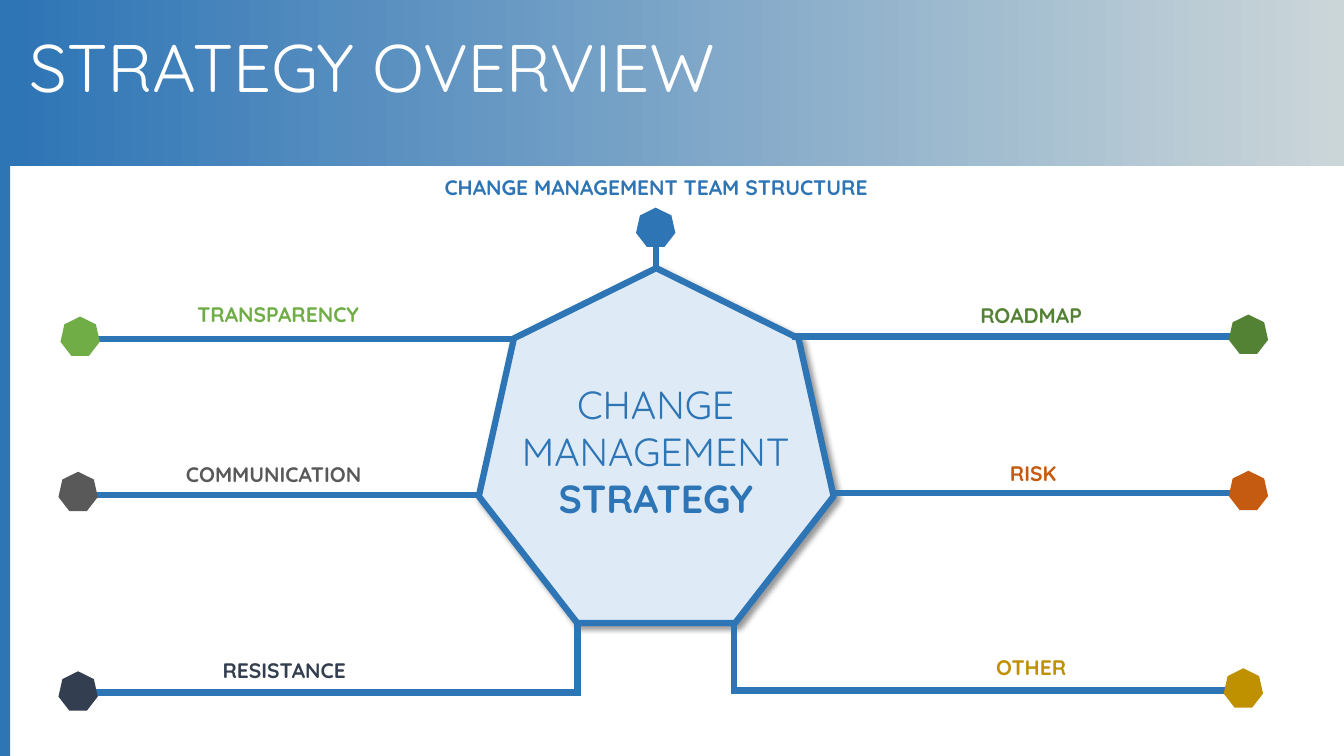
from dataclasses import dataclass

from lxml.etree import SubElement
from pptx import Presentation
from pptx.dml.color import RGBColor
from pptx.enum.shapes import MSO_CONNECTOR, MSO_SHAPE
from pptx.enum.text import MSO_AUTO_SIZE, PP_ALIGN
from pptx.oxml.ns import qn
from pptx.shapes.autoshape import Shape
from pptx.slide import Slide
from pptx.util import Pt

COLORS = {
    "blue": "2E75B6", "mist": "CBD6D9", "pale": "DEEBF7", "white": "FFFFFF",
    "green": "70AD47", "forest": "548235", "orange": "C55A11",
    "gold": "BF9000", "navy": "333F50", "gray": "595959", "black": "000000",
}
TITLE_FORMAT = {"name": "Quicksand", "size": Pt(48), "bold": False}
CORE_FORMAT = {"name": "Quicksand", "size": Pt(28), "bold": False}
STRONG_FORMAT = CORE_FORMAT | {"bold": True}
LABEL_FORMAT = {"name": "Quicksand", "size": Pt(15), "bold": True}
MARKER_SIZE = 28.08
LABEL_HEIGHT = 25.2
BORDER = 4.5

Point = tuple[float, float]
Box = tuple[float, float, float, float]
Line = tuple[str, dict]


@dataclass(frozen=True)
class Topic:
    name: str
    color: str
    label: Point
    marker: Point
    branches: tuple[tuple[Point, Point], ...]
    label_width: float = 208.8


TOPICS = [
    Topic("CHANGE MANAGEMENT TEAM STRUCTURE", "blue", (290.88, 120.96), (454.32, 148.32),
          (((468.72, 191.52), (468.72, 162.72)),), 355.68),
    Topic("TRANSPARENCY", "green", (94.32, 211.68), (43.2, 226.08),
          (((48.96, 241.92), (367.2, 241.92)),)),
    Topic("COMMUNICATION", "gray", (45.36, 326.16), (41.76, 336.96),
          (((48.96, 353.52), (342, 353.52)),), 300.24),
    Topic("RESISTANCE", "navy", (98.64, 465.84), (41.76, 479.52),
          (((48.96, 494.64), (414.72, 494.64)), ((412.56, 493.92), (412.56, 444.96)))),
    Topic("ROADMAP", "forest", (632.16, 212.4), (877.68, 224.64),
          (((565.92, 240.48), (884.16, 240.48)),)),
    Topic("RISK", "orange", (633.6, 325.44), (877.68, 336.24),
          (((595.44, 352.08), (887.76, 352.08)),)),
    Topic("OTHER", "gold", (632.16, 463.68), (874.08, 477.36),
          (((522, 493.2), (887.76, 493.2)), ((524.16, 493.2), (524.16, 444.96)))),
]


def rgb(color: str) -> RGBColor:
    return RGBColor.from_string(COLORS[color])


def add_figure(slide: Slide, kind: MSO_SHAPE, box: Box, color: str) -> Shape:
    figure = slide.shapes.add_shape(kind, *map(Pt, box))
    figure.shadow.inherit = False
    figure.fill.solid()
    figure.fill.fore_color.rgb = rgb(color)
    figure.line.fill.background()
    return figure


def add_text(slide: Slide, box: Box, lines: list[Line], color: str,
             align: PP_ALIGN = PP_ALIGN.CENTER, wrap: bool = True) -> None:
    frame = slide.shapes.add_textbox(*map(Pt, box)).text_frame
    frame.word_wrap = wrap
    frame.auto_size = MSO_AUTO_SIZE.SHAPE_TO_FIT_TEXT
    for index, (words, font_format) in enumerate(lines):
        paragraph = frame.add_paragraph() if index else frame.paragraphs[0]
        paragraph.alignment = align
        run = paragraph.add_run()
        run.text = words
        for attribute, value in font_format.items():
            setattr(run.font, attribute, value)
        run.font.color.rgb = rgb(color)


def add_branch(slide: Slide, start: Point, end: Point) -> None:
    branch = slide.shapes.add_connector(
        MSO_CONNECTOR.STRAIGHT, *map(Pt, (*start, *end)))
    branch.line.color.rgb = rgb("blue")
    branch.line.width = Pt(BORDER)
    SubElement(branch._element.spPr, qn("a:effectLst"))


def add_banner(slide: Slide) -> None:
    banner = add_figure(slide, MSO_SHAPE.RECTANGLE, (7.2, 0, 952.8, 118.8), "blue")
    banner.fill.gradient()
    banner.fill.gradient_angle = 0
    for stop, color in zip(banner.fill.gradient_stops, ("blue", "mist")):
        stop.color.rgb = rgb(color)
    add_figure(slide, MSO_SHAPE.RECTANGLE, (0, 0, 7.2, 540), "blue")
    add_text(slide, (13.68, 14.4, 504.72, 65.52), [("STRATEGY OVERVIEW", TITLE_FORMAT)],
             "white", PP_ALIGN.LEFT, wrap=False)


def add_core(slide: Slide) -> None:
    core = add_figure(slide, MSO_SHAPE.HEPTAGON, (342, 191.52, 253.44, 253.44), "pale")
    core.line.color.rgb = rgb("blue")
    core.line.width = Pt(BORDER)
    effects = core._element.spPr.find(qn("a:effectLst"))
    shadow = SubElement(effects, qn("a:outerShdw"), blurRad=str(Pt(4)), dist=str(Pt(3)),
                        dir=str(45 * 60000), algn="tl", rotWithShape="0")
    shade = SubElement(shadow, qn("a:srgbClr"), val=COLORS["black"])
    SubElement(shade, qn("a:alpha"), val="40000")
    add_text(slide, (359.28, 267.84, 218.16, 108.72),
             [("CHANGE", CORE_FORMAT), ("MANAGEMENT", CORE_FORMAT),
              ("STRATEGY", STRONG_FORMAT)], "blue")


def add_topic(slide: Slide, topic: Topic) -> None:
    for start, end in topic.branches:
        add_branch(slide, start, end)
    add_figure(slide, MSO_SHAPE.HEPTAGON,
               (*topic.marker, MARKER_SIZE, MARKER_SIZE), topic.color)
    add_text(slide, (*topic.label, topic.label_width, LABEL_HEIGHT),
             [(topic.name, LABEL_FORMAT)], topic.color)


def main() -> None:
    presentation = Presentation()
    presentation.slide_width = Pt(960)
    presentation.slide_height = Pt(540)
    slide = presentation.slides.add_slide(presentation.slide_layouts[6])
    add_banner(slide)
    add_core(slide)
    for topic in TOPICS:
        add_topic(slide, topic)
    presentation.save("out.pptx")


if __name__ == "__main__":
    main()
